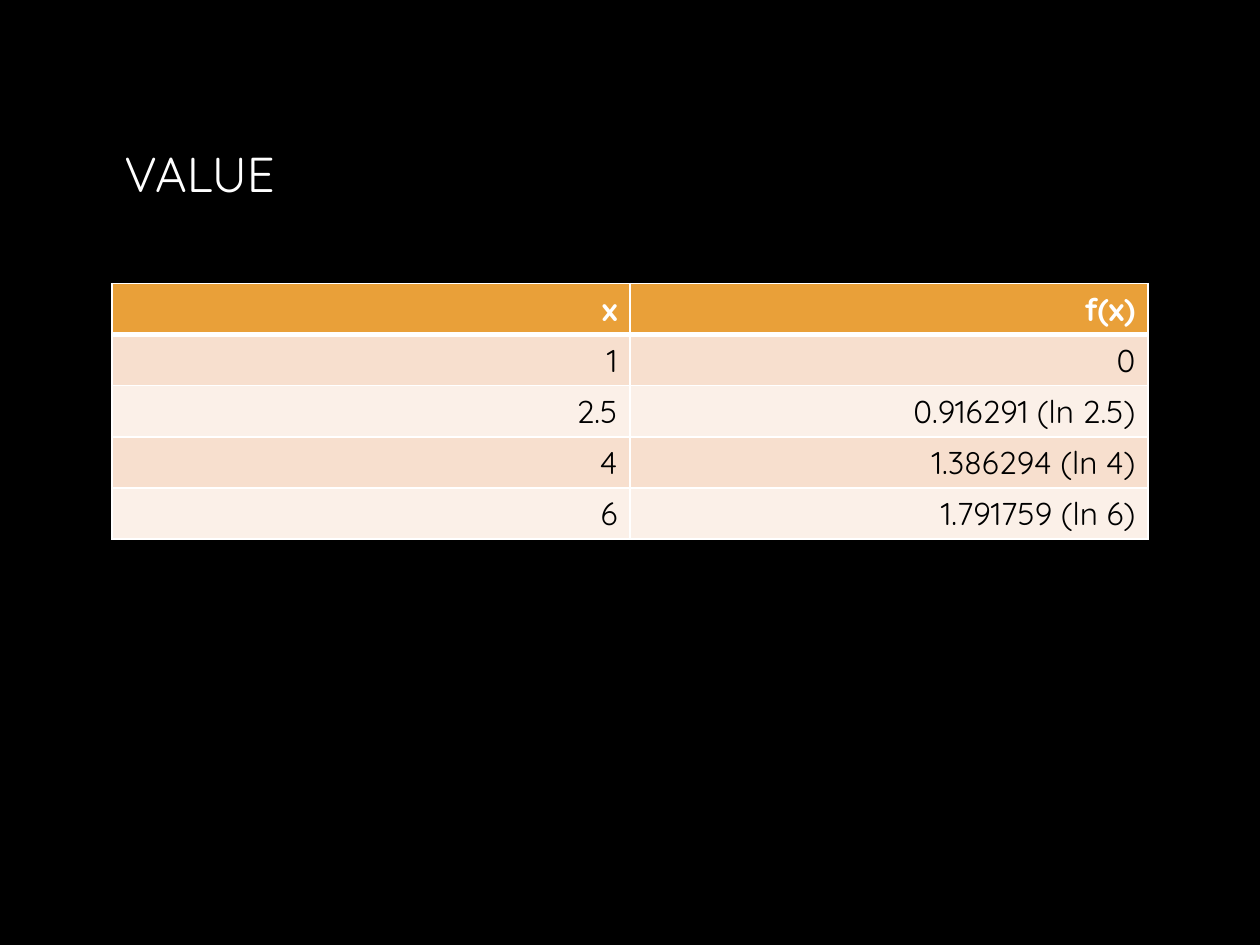
from dataclasses import dataclass

from lxml import etree
from pptx import Presentation
from pptx.dml.color import RGBColor as Rgb
from pptx.enum import text
from pptx.oxml import ns
from pptx.util import Pt


@dataclass(frozen=True)
class Theme:
    font: str = "Quicksand"
    back: str = "000000"
    light: str = "FFFFFF"
    dark: str = "000000"
    head: str = "E9A039"
    bands: tuple = ("F7DFCE", "FBF0E8")
    title: int = 28
    body: int = 18
    thin: int = 1
    thick: int = 3


THEME = Theme()
LEFT, WIDTH = 64, 592
ROW = 29.2
ROWS = [
    ("x", "f(x)"),
    ("1", "0"),
    ("2.5", "0.916291 (ln 2.5)"),
    ("4", "1.386294 (ln 4)"),
    ("6", "1.791759 (ln 6)"),
]


def style(para, size, color, bold=False):
    font = para.font
    font.name = THEME.font
    font.size = Pt(size)
    font.bold = bold
    font.color.rgb = Rgb.from_string(color)


def add_title(slide, words):
    box = slide.shapes.add_textbox(Pt(LEFT), Pt(46.8), Pt(WIDTH), Pt(103.7))
    frame = box.text_frame
    frame.word_wrap = True
    frame.vertical_anchor = text.MSO_ANCHOR.MIDDLE
    frame.text = words
    style(frame.paragraphs[0], THEME.title, THEME.light)


def add_border(cell, side, width):
    props = cell._tc.get_or_add_tcPr()
    line = etree.SubElement(props, ns.qn(f"a:ln{side}"), w=str(Pt(width)))
    fill = etree.SubElement(line, ns.qn("a:solidFill"))
    etree.SubElement(fill, ns.qn("a:srgbClr"), val=THEME.light)


def fill_cell(cell, words, row):
    head = row == 0
    widths = {
        "L": THEME.thin,
        "R": THEME.thin,
        "T": THEME.thick if row == 1 else THEME.thin,
        "B": THEME.thick if head else THEME.thin,
    }
    for side, width in widths.items():
        add_border(cell, side, width)
    cell.fill.solid()
    color = THEME.head if head else THEME.bands[(row - 1) % 2]
    cell.fill.fore_color.rgb = Rgb.from_string(color)
    cell.text = words
    para = cell.text_frame.paragraphs[0]
    para.alignment = text.PP_ALIGN.RIGHT
    style(para, THEME.body, THEME.light if head else THEME.dark, head)


def add_grid(slide, rows):
    count = len(rows[0])
    frame = slide.shapes.add_table(
        len(rows), count, Pt(LEFT), Pt(162), Pt(WIDTH), Pt(ROW * len(rows))
    )
    table = frame.table
    for col in table.columns:
        col.width = Pt(WIDTH / count)
    for r, row in enumerate(rows):
        table.rows[r].height = Pt(ROW)
        for c, words in enumerate(row):
            fill_cell(table.cell(r, c), words, r)


def main():
    deck = Presentation()
    deck.slide_width, deck.slide_height = Pt(720), Pt(540)
    slide = deck.slides.add_slide(deck.slide_layouts[6])
    back = slide.background.fill
    back.solid()
    back.fore_color.rgb = Rgb.from_string(THEME.back)
    add_title(slide, "VALUE")
    add_grid(slide, ROWS)
    deck.save("out.pptx")


if __name__ == "__main__":
    main()
